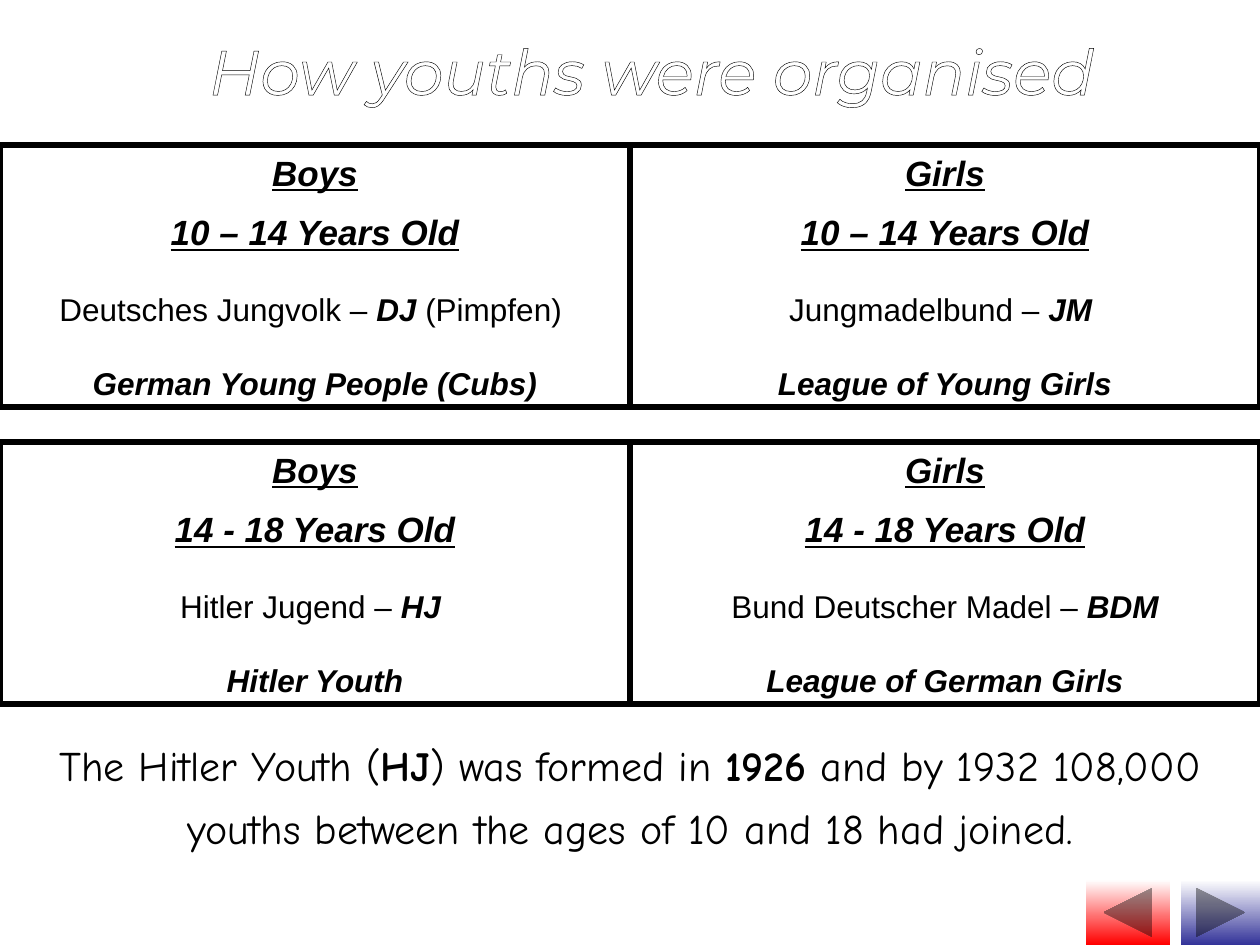
"""Build the slide on how youths were organised, with four group boxes."""
from dataclasses import dataclass

from lxml import etree
from pptx import Presentation
from pptx.dml.color import RGBColor
from pptx.enum.shapes import MSO_SHAPE
from pptx.enum.text import MSO_ANCHOR, MSO_AUTO_SIZE, PP_ALIGN
from pptx.oxml.ns import qn
from pptx.util import Emu, Pt

RECT = MSO_SHAPE.RECTANGLE
BACK = MSO_SHAPE.ACTION_BUTTON_BACK_OR_PREVIOUS
NEXT = MSO_SHAPE.ACTION_BUTTON_FORWARD_OR_NEXT
CENTER, TOP = PP_ALIGN.CENTER, MSO_ANCHOR.TOP
FIT = MSO_AUTO_SIZE.SHAPE_TO_FIT_TEXT


@dataclass(frozen=True)
class Theme:
    black: str = "000000"
    white: str = "FFFFFF"
    red: str = "FF0000"
    blue: str = "333399"
    box_font: str = "Arial"
    title_font: str = "Montserrat"
    body_font: str = "Comic Neue"
    title: int = 36
    body: int = 24
    heading: int = 20
    detail: int = 18
    gap: int = 10
    border: int = 3
    outline: float = 0.75


T = Theme()
PX = 914400 // 126
WIDTH, HEIGHT = 1260, 945
BOX_TOP, BOX_W, BOX_H, BOX_STEP = 145, 630, 262, 297

TITLE = "How youths were organised"
GROUPS = [
    [
        ("Boys", "10 – 14 Years Old", "Deutsches Jungvolk – ", "DJ", " (Pimpfen) ",
         "German Young People (Cubs)"),
        ("Girls", "10 – 14 Years Old", "Jungmadelbund – ", "JM ", "",
         "League of Young Girls"),
    ],
    [
        ("Boys", "14 - 18 Years Old", "Hitler Jugend – ", "HJ ", "", "Hitler Youth"),
        ("Girls", "14 - 18 Years Old", "Bund Deutscher Madel – ", "BDM", "",
         "League of German Girls"),
    ],
]
BODY = [
    ("The Hitler Youth (", False),
    ("HJ", True),
    (") was formed in ", False),
    ("1926", True),
    (" and by 1932 108,000 youths between the ages of 10 and 18 had joined.", False),
]
BUTTONS = [(BACK, 1086, 84, T.red), (NEXT, 1181, 79, T.blue)]
BUTTON_TOP, BUTTON_H = 880, 65


def rgb(color):
    return RGBColor.from_string(color)


def px(*lengths):
    return [Emu(n * PX) for n in lengths]


def add_run(p, text, size, font, color=T.black, bold=False, italic=False, underline=False):
    r = p.add_run()
    r.text = text
    r.font.size, r.font.name = Pt(size), font
    r.font.bold, r.font.italic, r.font.underline = bold, italic, underline
    r.font.color.rgb = rgb(color)
    return r


def add_paragraph(tf, first):
    p = tf.paragraphs[0] if first else tf.add_paragraph()
    p.alignment = CENTER
    p.space_before = Pt(0)
    before = p._p.pPr.find(qn("a:spcBef"))
    before.remove(before[0])
    etree.SubElement(before, qn("a:spcPct"), val="50000")
    return p


def add_gap(p):
    p.add_line_break()
    etree.SubElement(p._p[-1], qn("a:rPr"), sz=str(T.gap * 100))


def add_group(s, left, top, group):
    who, ages, name, short, extra, meaning = group
    sp = s.shapes.add_shape(RECT, *px(left, top, BOX_W, BOX_H))
    sp.shadow.inherit = False
    sp.fill.background()
    sp.line.color.rgb = rgb(T.black)
    sp.line.width = Pt(T.border)
    tf = sp.text_frame
    tf.word_wrap, tf.auto_size, tf.vertical_anchor = True, FIT, TOP
    for i, text in enumerate((who, ages)):
        p = add_paragraph(tf, i == 0)
        add_run(p, text, T.heading, T.box_font, bold=True, italic=True, underline=True)
    for parts in ([(name, False), (short, True), (extra, False)], [(meaning, True)]):
        p = add_paragraph(tf, False)
        add_gap(p)
        for text, strong in parts:
            if text:
                add_run(p, text, T.detail, T.box_font, bold=strong, italic=strong)


def add_button(s, kind, left, width, color):
    sp = s.shapes.add_shape(kind, *px(left, BUTTON_TOP, width, BUTTON_H))
    sp.shadow.inherit = False
    sp.line.fill.background()
    sp.fill.gradient()
    sp.fill.gradient_angle = 270
    for stop, shade, position in zip(sp.fill.gradient_stops, (T.white, color), (0, 1)):
        stop.color.rgb = rgb(shade)
        stop.position = position


def add_title(s):
    tf = s.shapes.add_textbox(*px(174, 26, 955, 89)).text_frame
    tf.word_wrap = False
    p = tf.paragraphs[0]
    p.alignment = CENTER
    r = add_run(p, TITLE, T.title, T.title_font, T.white, italic=True)
    ln = etree.Element(qn("a:ln"), w=str(Pt(T.outline)))
    fill = etree.SubElement(ln, qn("a:solidFill"))
    etree.SubElement(fill, qn("a:srgbClr"), val=T.black)
    r._r.rPr.insert(0, ln)


def add_body(s):
    tf = s.shapes.add_textbox(*px(0, 721, WIDTH, 139)).text_frame
    tf.word_wrap, tf.auto_size = True, FIT
    p = add_paragraph(tf, True)
    p.line_spacing = 1.25
    for text, bold in BODY:
        add_run(p, text, T.body, T.body_font, bold=bold)


def main():
    prs = Presentation()
    prs.slide_width, prs.slide_height = px(WIDTH, HEIGHT)
    s = prs.slides.add_slide(prs.slide_layouts[6])
    for row, groups in enumerate(GROUPS):
        for col, group in enumerate(groups):
            add_group(s, col * BOX_W, BOX_TOP + row * BOX_STEP, group)
    for button in BUTTONS:
        add_button(s, *button)
    add_title(s)
    add_body(s)
    prs.save("out.pptx")


if __name__ == "__main__":
    main()
